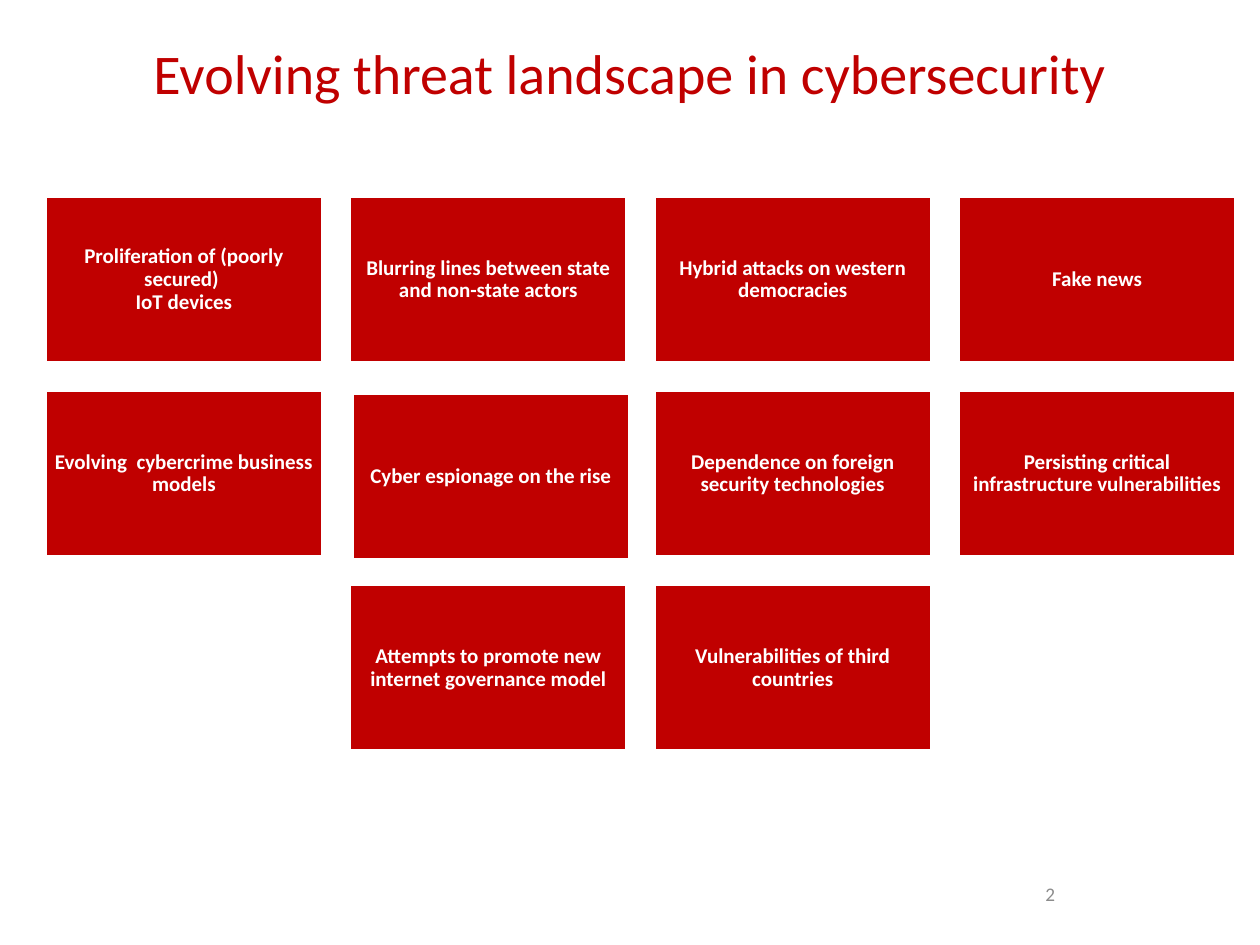
from dataclasses import dataclass

from pptx import Presentation
from pptx.dml.color import RGBColor
from pptx.enum.shapes import MSO_SHAPE
from pptx.enum.text import MSO_ANCHOR, PP_ALIGN
from pptx.shapes.base import BaseShape
from pptx.slide import Slide
from pptx.text.text import _Paragraph as Paragraph
from pptx.util import Inches, Pt


@dataclass(frozen=True)
class Theme:
    font: str = "Calibri"
    red: RGBColor = RGBColor(0xC0, 0x00, 0x00)
    white: RGBColor = RGBColor(0xFF, 0xFF, 0xFF)
    gray: RGBColor = RGBColor(0x8C, 0x8C, 0x8C)
    title_size: int = 32
    tile_size: int = 12
    number_size: int = 11


@dataclass(frozen=True)
class Threat:
    text: str
    column: int
    row: int
    nudge: float = 0


THEME = Theme()
GRID_LEFT, GRID_TOP = 0.36, 1.56
COLUMN_STEP, ROW_STEP = 2.416, 1.54
TILE_WIDTH, TILE_HEIGHT = 2.2, 1.32
TILE_INSET = 0.05

THREATS = [
    Threat("Proliferation of (poorly secured) \vIoT devices", 0, 0),
    Threat("Blurring lines between state and non-state actors", 1, 0),
    Threat("Hybrid attacks on western democracies", 2, 0),
    Threat("Fake news", 3, 0),
    Threat("Evolving  cybercrime business models", 0, 1),
    Threat("Cyber espionage on the rise", 1, 1, nudge=0.02),
    Threat("Dependence on foreign security technologies", 2, 1),
    Threat("Persisting critical infrastructure vulnerabilities", 3, 1),
    Threat("Attempts to promote new internet governance model", 1, 2),
    Threat("Vulnerabilities of third countries", 2, 2),
]


def write_centered(shape: BaseShape, text: str, size: int, color: RGBColor,
                   anchor: MSO_ANCHOR, bold: bool = False) -> Paragraph:
    frame = shape.text_frame
    frame.word_wrap = True
    frame.vertical_anchor = anchor
    paragraph = frame.paragraphs[0]
    paragraph.text = text
    paragraph.alignment = PP_ALIGN.CENTER
    paragraph.font.name = THEME.font
    paragraph.font.size = Pt(size)
    paragraph.font.bold = bold
    paragraph.font.color.rgb = color
    return paragraph


def add_label(slide: Slide, left: float, top: float, width: float, height: float,
              text: str, size: int, color: RGBColor, anchor: MSO_ANCHOR) -> None:
    box = slide.shapes.add_textbox(Inches(left), Inches(top), Inches(width), Inches(height))
    write_centered(box, text, size, color, anchor)


def add_threat(slide: Slide, threat: Threat) -> None:
    left = GRID_LEFT + threat.column * COLUMN_STEP + threat.nudge
    top = GRID_TOP + threat.row * ROW_STEP + threat.nudge
    tile = slide.shapes.add_shape(MSO_SHAPE.RECTANGLE, Inches(left), Inches(top),
                                  Inches(TILE_WIDTH), Inches(TILE_HEIGHT))
    tile.shadow.inherit = False
    tile.fill.solid()
    tile.fill.fore_color.rgb = THEME.red
    tile.line.color.rgb = THEME.white
    tile.line.width = Pt(2)
    frame = tile.text_frame
    frame.margin_left = frame.margin_right = Inches(TILE_INSET)
    frame.margin_top = frame.margin_bottom = Inches(TILE_INSET)
    paragraph = write_centered(tile, threat.text, THEME.tile_size, THEME.white,
                               MSO_ANCHOR.MIDDLE, bold=True)
    paragraph.line_spacing = 0.9
    paragraph.space_after = Pt(4.2)


def main() -> None:
    presentation = Presentation()
    presentation.slide_width = Inches(10)
    presentation.slide_height = Inches(7.5)
    slide = presentation.slides.add_slide(presentation.slide_layouts[6])
    add_label(slide, 0, 0.26, 10, 1.18, "Evolving threat landscape in cybersecurity",
              THEME.title_size, THEME.red, MSO_ANCHOR.TOP)
    for threat in THREATS:
        add_threat(slide, threat)
    add_label(slide, 7.17, 6.83, 2.33, 0.52, "2",
              THEME.number_size, THEME.gray, MSO_ANCHOR.MIDDLE)
    presentation.save("out.pptx")


if __name__ == "__main__":
    main()
